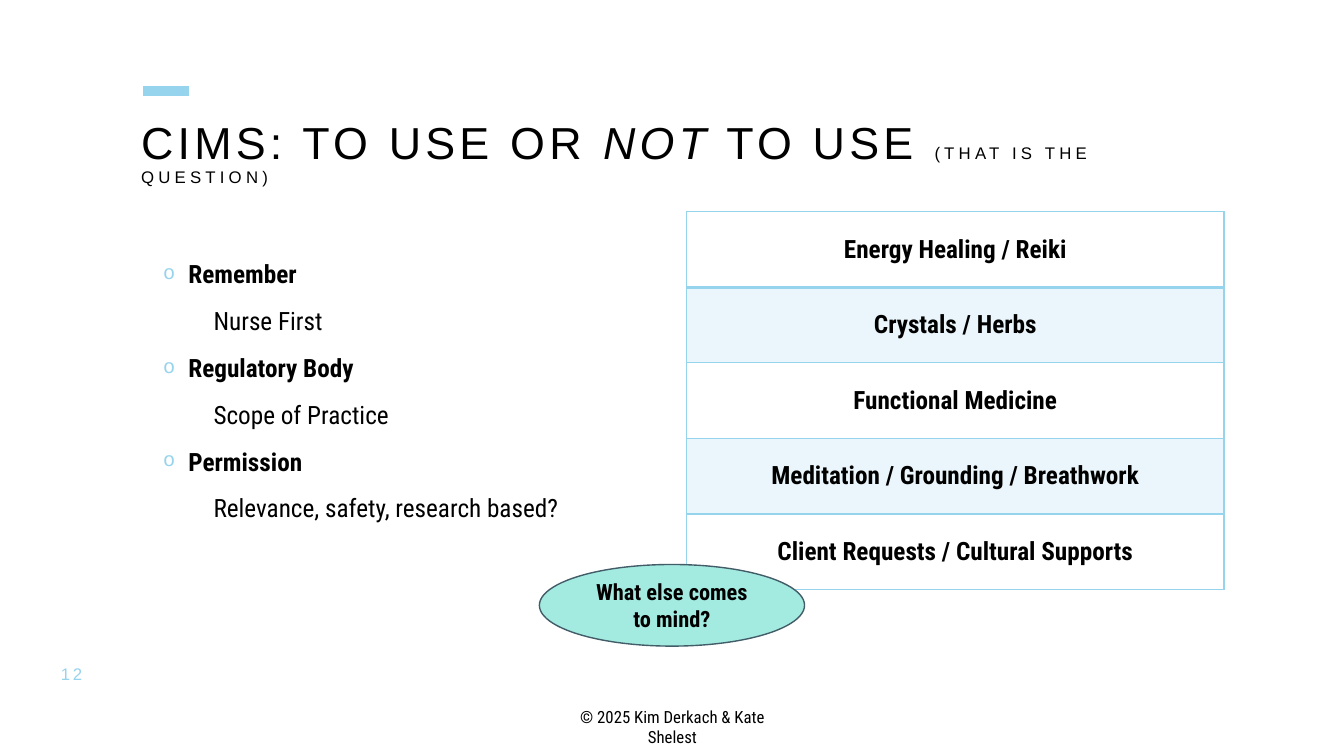
from lxml.etree import SubElement
from pptx import Presentation
from pptx.dml.color import RGBColor
from pptx.enum.shapes import MSO_CONNECTOR, MSO_SHAPE
from pptx.enum.text import MSO_ANCHOR, PP_ALIGN
from pptx.oxml.ns import qn
from pptx.util import Pt

PX = 9144  # 100 px to the inch
COLORS = {"sky": "96D3ED", "mint": "A3EBE0", "slate": "425C68", "ink": "000000"}
HEADING_FONT, BODY_FONT = "Arial", "Roboto Condensed"

TITLE = [("CIMS: TO USE OR ", 32, False), ("NOT", 32, True),
         (" TO USE ", 32, False), ("(THAT IS THE QUESTION)", 12, False)]
REMINDERS = [("Remember", "Nurse First"),
             ("Regulatory Body", "Scope of Practice"),
             ("Permission", "Relevance, safety, research based?")]
MODALITIES = ["Energy Healing / Reiki", "Crystals / Herbs", "Functional Medicine",
              "Meditation / Grounding / Breathwork", "Client Requests / Cultural Supports"]


def color(name):
    return RGBColor.from_string(COLORS[name])


def emu(box):
    return [length * PX for length in box]


def style_run(run, size, font=BODY_FONT, ink="ink", bold=False, italic=False, tracking=0):
    """Format a run; tracking is letter spacing in points."""
    run.font.size = Pt(size)
    run.font.name = font
    run.font.color.rgb = color(ink)
    run.font.bold = bold
    run.font.italic = italic
    if tracking:
        run.font._element.set("spc", str(tracking * 100))


def fill_frame(frame, text, size, **style):
    """Put one centred line of text into a frame."""
    frame.word_wrap = True
    line = frame.paragraphs[0]
    line.text = text
    line.alignment = PP_ALIGN.CENTER
    style_run(line.runs[0], size, **style)


def add_text_frame(slide, box, inset=True):
    frame = slide.shapes.add_textbox(*emu(box)).text_frame
    frame.word_wrap = True
    if not inset:
        frame.margin_left = frame.margin_right = 0
        frame.margin_top = frame.margin_bottom = 0
    return frame


def add_title(slide, box):
    left, top, _, _ = box
    dash_y = top - 30
    dash = slide.shapes.add_connector(
        MSO_CONNECTOR.STRAIGHT, *emu((left + 2, dash_y, left + 47, dash_y)))
    dash.line.color.rgb = color("sky")
    dash.line.width = Pt(7)
    SubElement(dash._element.spPr, qn("a:effectLst"))

    heading = add_text_frame(slide, box, inset=False).paragraphs[0]
    heading.line_spacing = 0.9
    for text, size, italic in TITLE:
        run = heading.add_run()
        run.text = text
        style_run(run, size, HEADING_FONT, italic=italic, tracking=3)


def set_indent(paragraph, margin, hanging=0):
    properties = paragraph._p.get_or_add_pPr()
    properties.set("marL", str(margin * PX))
    properties.set("indent", str(-hanging * PX))
    return properties


def add_bullet(properties):
    bullet_color = SubElement(properties, qn("a:buClr"))
    SubElement(bullet_color, qn("a:srgbClr"), val=COLORS["sky"])
    SubElement(properties, qn("a:buSzPct"), val="80000")
    SubElement(properties, qn("a:buFont"), typeface="Courier New")
    SubElement(properties, qn("a:buChar"), char="o")


def add_reminders(slide, box):
    frame = add_text_frame(slide, box)
    lines = [line for pair in REMINDERS for line in pair]
    frame.text = "\n".join(lines)
    for index, paragraph in enumerate(frame.paragraphs):
        is_topic = index % 2 == 0
        paragraph.line_spacing = 0.9
        paragraph.space_before = Pt(14)
        style_run(paragraph.runs[0], 18, bold=is_topic)
        if is_topic:
            add_bullet(set_indent(paragraph, 25, hanging=25))
        else:
            paragraph.level = 1
            set_indent(paragraph, 50)


def set_borders(cell, widths):
    """Draw cell borders; widths maps L, R, T, B to points."""
    properties = cell._tc.get_or_add_tcPr()
    for position, (side, width) in enumerate(widths.items()):
        border = SubElement(properties, qn(f"a:ln{side}"), w=str(Pt(width)))
        SubElement(SubElement(border, qn("a:solidFill")), qn("a:srgbClr"), val=COLORS["sky"])
        properties.insert(position, border)


def add_modalities(slide, box):
    table = slide.shapes.add_table(len(MODALITIES), 1, *emu(box)).table
    table.first_row = table.horz_banding = False
    for index, modality in enumerate(MODALITIES):
        cell = table.cell(index, 0)
        cell.vertical_anchor = MSO_ANCHOR.MIDDLE
        fill_frame(cell.text_frame, modality, 18, bold=True)
        if index % 2:
            cell.fill.solid()
            cell.fill.fore_color.rgb = color("sky")
            tint = cell._tc.tcPr.find(".//" + qn("a:srgbClr"))
            SubElement(tint, qn("a:alpha"), val="20000")
        else:
            cell.fill.background()
        set_borders(cell, {"L": 1, "R": 1, "T": 2 if index == 1 else 1,
                           "B": 2 if index == 0 else 1})


def add_prompt(slide, box):
    prompt = slide.shapes.add_shape(MSO_SHAPE.OVAL, *emu(box))
    prompt.shadow.inherit = False
    prompt.fill.solid()
    prompt.fill.fore_color.rgb = color("mint")
    prompt.line.color.rgb = color("slate")
    prompt.line.width = Pt(1)
    prompt.text_frame.vertical_anchor = MSO_ANCHOR.MIDDLE
    fill_frame(prompt.text_frame, "What else comes to mind?", 16, bold=True)


def add_footer(slide, number_box, credit_box):
    number = add_text_frame(slide, number_box, inset=False)
    number.vertical_anchor = MSO_ANCHOR.MIDDLE
    fill_frame(number, "12", 12, font=HEADING_FONT, ink="sky", tracking=2)
    fill_frame(add_text_frame(slide, credit_box), "© 2025 Kim Derkach & Kate Shelest", 12)


def main():
    deck = Presentation()
    deck.slide_width, deck.slide_height = emu((1333, 750))
    slide = deck.slides.add_slide(deck.slide_layouts[6])
    add_title(slide, (140, 120, 1074, 100))
    add_reminders(slide, (152, 255, 500, 295))
    add_modalities(slide, (681, 210, 533, 375))
    add_footer(slide, (46, 658, 50, 20), (545, 696, 244, 30))
    add_prompt(slide, (535, 560, 263, 81))
    deck.save("out.pptx")


if __name__ == "__main__":
    main()
